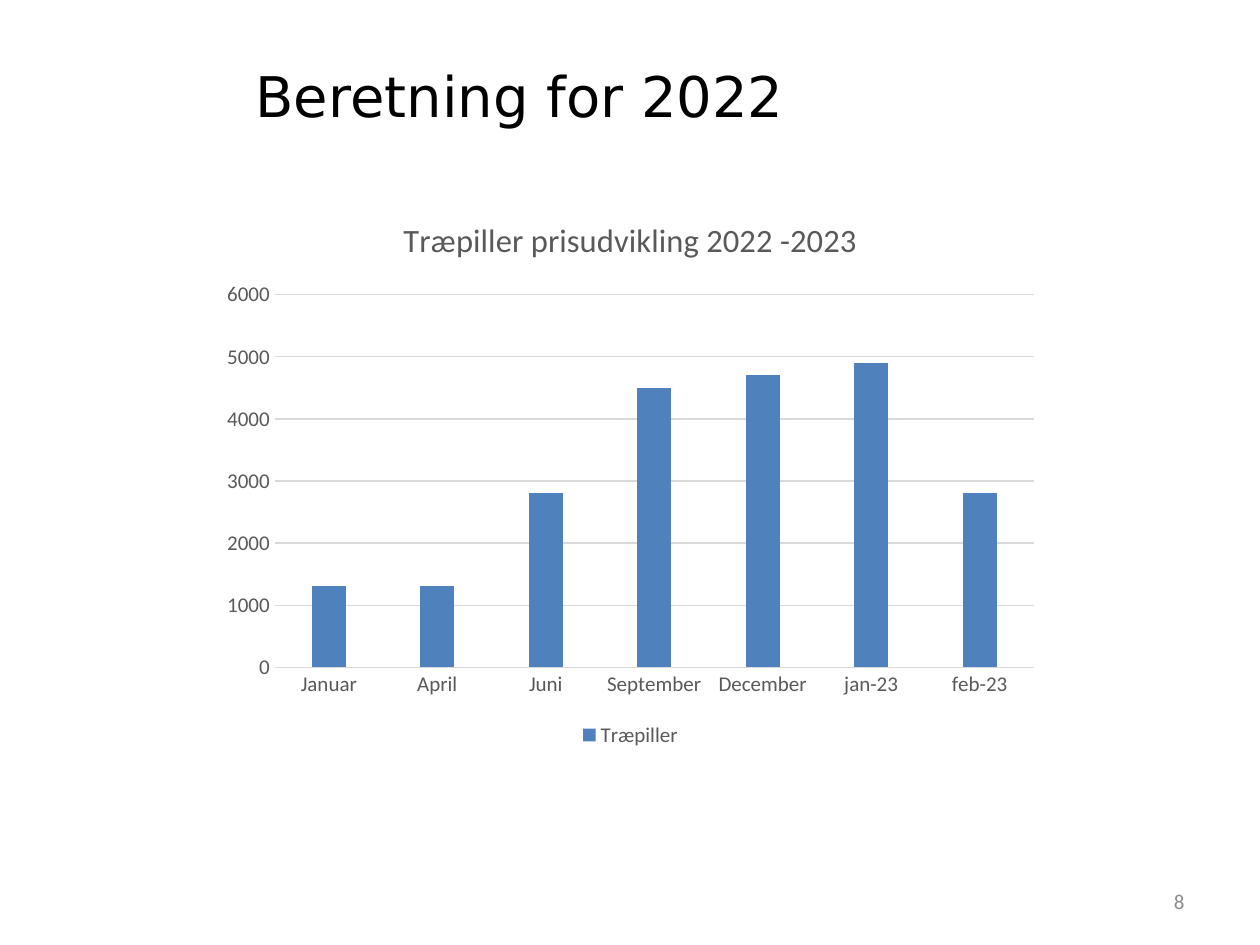
import pptx
import pptx.chart.data
import pptx.dml.color
import pptx.enum.chart
import pptx.enum.text
import pptx.util
from pptx.util import Cm

GREY = "595959"
GRID = "D9D9D9"
BLUE = "4F81BD"
PRICES = {
    "Januar": 1300,
    "April": 1300,
    "Juni": 2800,
    "September": 4500,
    "December": 4700,
    "jan-23": 4900,
    "feb-23": 2800,
}


def color(hex_value):
    return pptx.dml.color.RGBColor.from_string(hex_value)


def set_attributes(target, values):
    for name, value in values.items():
        setattr(target, name, value)


def style_font(font, size, hex_value, name="Calibri"):
    set_attributes(font, {"size": pptx.util.Pt(size), "name": name, "bold": False})
    font.color.rgb = color(hex_value)


def style_line(line, hex_value):
    line.color.rgb = color(hex_value)
    line.width = pptx.util.Pt(0.75)


def add_text(slide, box, text, font_format, frame_format, alignment):
    frame = slide.shapes.add_textbox(*box).text_frame
    set_attributes(frame, {"word_wrap": True, **frame_format})
    paragraph = frame.paragraphs[0]
    paragraph.alignment = alignment
    run = paragraph.add_run()
    run.text = text
    style_font(run.font, *font_format)


def add_price_chart(slide, box):
    chart_enum = pptx.enum.chart
    data = pptx.chart.data.CategoryChartData()
    data.categories = list(PRICES)
    data.add_series("Træpiller", list(PRICES.values()))
    chart = slide.shapes.add_chart(
        chart_enum.XL_CHART_TYPE.COLUMN_CLUSTERED, *box, data
    ).chart
    style_font(chart.font, 12, GREY)

    # Chart title
    chart.has_title = True
    title_frame = chart.chart_title.text_frame
    title_frame.text = "Træpiller prisudvikling 2022 -2023"
    style_font(title_frame.paragraphs[0].runs[0].font, 18.6, GREY)
    chart.chart_title.include_in_layout = False

    # Legend
    chart.has_legend = True
    set_attributes(chart.legend, {
        "position": chart_enum.XL_LEGEND_POSITION.BOTTOM,
        "include_in_layout": False,
    })
    style_font(chart.legend.font, 12, GREY)

    # Axes
    for axis in (chart.category_axis, chart.value_axis):
        set_attributes(axis, {
            "major_tick_mark": chart_enum.XL_TICK_MARK.NONE,
            "minor_tick_mark": chart_enum.XL_TICK_MARK.NONE,
        })
        style_font(axis.tick_labels.font, 12, GREY)
    style_line(chart.category_axis.format.line, GRID)
    set_attributes(chart.value_axis, {
        "minimum_scale": 0, "maximum_scale": 6000, "major_unit": 1000,
    })
    chart.value_axis.format.line.fill.background()
    style_line(chart.value_axis.major_gridlines.format.line, GRID)

    # Columns
    plot = chart.plots[0]
    set_attributes(plot, {
        "gap_width": 219, "overlap": -27, "vary_by_categories": False,
    })
    fill = plot.series[0].format.fill
    fill.solid()
    fill.fore_color.rgb = color(BLUE)


def main():
    presentation = pptx.Presentation()
    set_attributes(presentation, {"slide_width": Cm(25.4), "slide_height": Cm(19.05)})
    slide = presentation.slides.add_slide(presentation.slide_layouts[6])
    text_enum = pptx.enum.text

    # Page number
    add_text(
        slide, (Cm(18.21), Cm(17.65), Cm(5.92), Cm(1.02)), "8", (12, "8C8C8C"),
        {"vertical_anchor": text_enum.MSO_ANCHOR.MIDDLE}, text_enum.PP_ALIGN.RIGHT,
    )
    add_price_chart(slide, (Cm(4.24), Cm(3.89), Cm(16.94), Cm(11.28)))
    # Slide heading
    add_text(
        slide, (Cm(4.9), Cm(1.12), Cm(16.61), Cm(1.63)), "Beretning for 2022",
        (32, "000000", "DejaVu Sans"),
        {"auto_size": text_enum.MSO_AUTO_SIZE.SHAPE_TO_FIT_TEXT},
        text_enum.PP_ALIGN.LEFT,
    )
    presentation.save("out.pptx")


if __name__ == "__main__":
    main()
